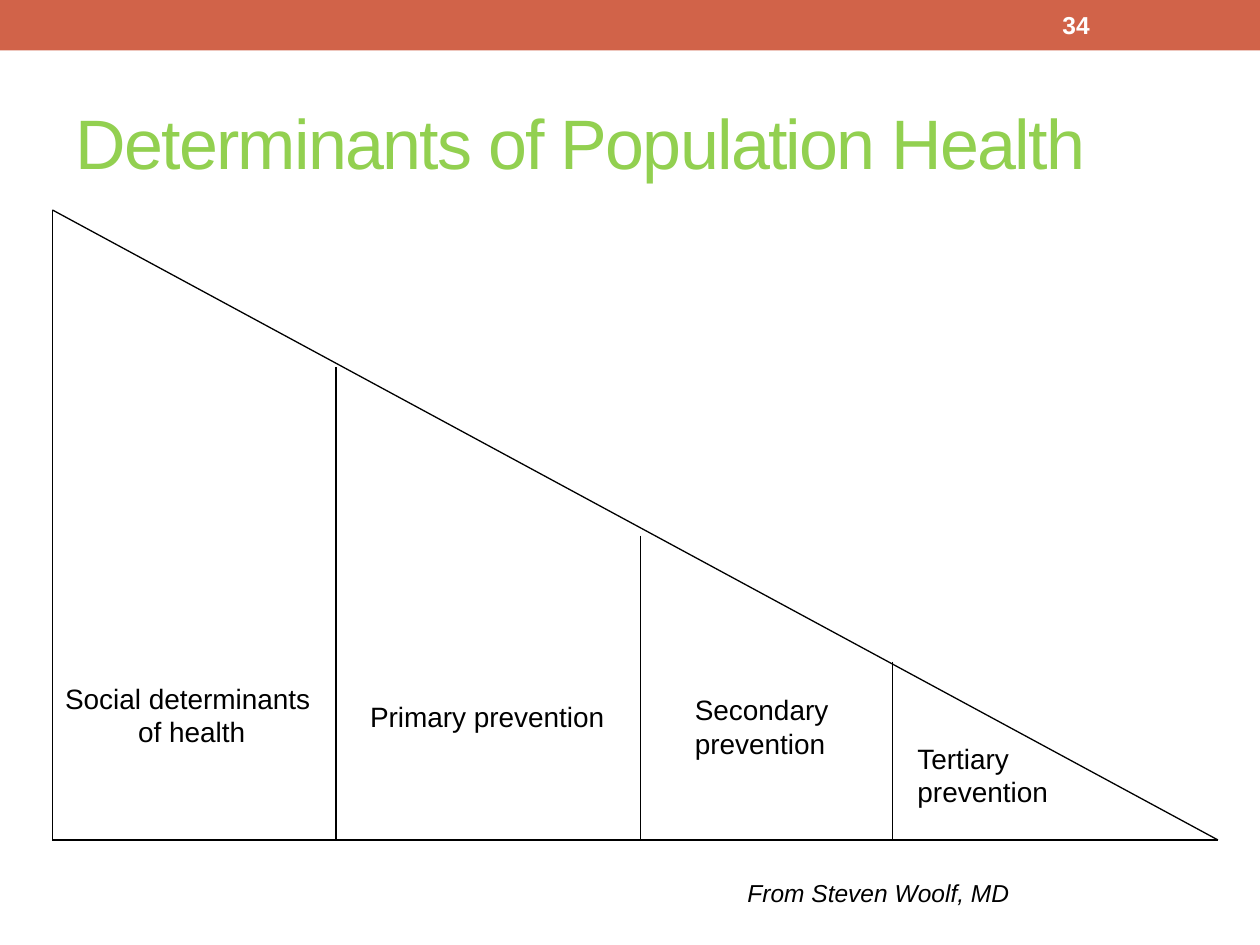
from dataclasses import dataclass

from lxml import etree
from pptx import Presentation
from pptx.dml.color import RGBColor
from pptx.enum.shapes import MSO_CONNECTOR, MSO_SHAPE
from pptx.enum.text import MSO_ANCHOR, MSO_AUTO_SIZE, PP_ALIGN
from pptx.oxml.ns import qn
from pptx.util import Inches, Pt

LINE, RECT = MSO_CONNECTOR.STRAIGHT, MSO_SHAPE.RECTANGLE
LEFT, MID = PP_ALIGN.LEFT, PP_ALIGN.CENTER
TOP, HALF = MSO_ANCHOR.TOP, MSO_ANCHOR.MIDDLE
FIT, FIXED = MSO_AUTO_SIZE.SHAPE_TO_FIT_TEXT, MSO_AUTO_SIZE.NONE
COLS, ROWS = 120, 90


@dataclass(frozen=True)
class Theme:
    font: str = "Arial"
    ink: str = "000000"
    paper: str = "FFFFFF"
    band: str = "D16349"
    head: str = "92D050"
    head_size: int = 40
    body_size: int = 16
    note_size: int = 14
    line: float = 0.75


class Deck:
    """Draws styled elements on a slide split into a grid of columns and rows."""

    def __init__(self, theme):
        self.theme = theme
        self.file = Presentation()
        self.file.slide_width, self.file.slide_height = Inches(10), Inches(7.5)
        self.slide = self.file.slides.add_slide(self.file.slide_layouts[5])
        self.shapes = self.slide.shapes
        fill = self.slide.background.fill
        fill.solid()
        fill.fore_color.rgb = RGBColor.from_string(theme.paper)

    def place(self, *cells):
        """Turn alternating columns and rows into slide lengths."""
        units = (self.file.slide_width / COLS, self.file.slide_height / ROWS)
        return [round(cell * units[i % 2]) for i, cell in enumerate(cells)]

    def band(self, *box):
        """Add a plain filled rectangle."""
        shape = self.shapes.add_shape(RECT, *self.place(*box))
        shape.shadow.inherit = False
        shape.fill.solid()
        shape.fill.fore_color.rgb = RGBColor.from_string(self.theme.band)
        shape.line.fill.background()

    def line(self, *ends):
        """Add a thin straight line."""
        line = self.shapes.add_connector(LINE, *self.place(*ends))
        line.line.width = Pt(self.theme.line)
        line.line.color.rgb = RGBColor.from_string(self.theme.ink)
        etree.SubElement(line._element.spPr, qn("a:effectLst"))

    def put(self, frame, rows, size, color, align=LEFT, bold=False, slant=False):
        """Fill a text frame with one run per paragraph and return the runs."""
        runs = []
        for i, text in enumerate(rows):
            para = frame.add_paragraph() if i else frame.paragraphs[0]
            para.alignment = align
            run = para.add_run()
            run.text = text
            font = run.font
            font.name, font.size = self.theme.font, Pt(size)
            font.bold, font.italic = bold, slant
            font.color.rgb = RGBColor.from_string(color)
            runs.append(run)
        return runs

    def text(self, box, rows, size, color, wrap=True, anchor=TOP, fit=FIT, **look):
        """Add a text box."""
        frame = self.shapes.add_textbox(*self.place(*box)).text_frame
        frame.word_wrap, frame.auto_size = wrap, fit
        frame.vertical_anchor = anchor
        self.put(frame, rows, size, color, **look)

    def title(self, box, text):
        """Move and format the title placeholder."""
        shape = self.shapes.title
        shape.left, shape.top, shape.width, shape.height = self.place(*box)
        frame = shape.text_frame
        frame.word_wrap, frame.auto_size = True, FIXED
        frame.vertical_anchor = HALF
        for run in self.put(frame, [text], self.theme.head_size, self.theme.head):
            run.font._element.set("spc", "-100")


def main():
    theme = Theme()
    deck = Deck(theme)
    deck.band(0, 0, COLS, 4.8)
    deck.title((6, 7, 108, 13), "Determinants of Population Health")

    left, right, top, base = 5, 116, 20, 80
    deck.line(left, base, right, base)
    deck.line(left, top, right, base)
    for col, row in ((left, top), (32, 35), (61, 51), (85, 63)):
        deck.line(col, row, col, base)

    labels = (
        ((5, 64.3, 26.5, 7.7), ("Social determinants ", "of health"), MID),
        ((34, 66, 24.8, 4.4), ("Primary prevention",), MID),
        ((65, 65.4, 15.8, 7.7), ("Secondary", "prevention"), LEFT),
        ((86.2, 70, 14.9, 7.7), ("Tertiary", "prevention"), LEFT),
    )
    for box, rows, align in labels:
        deck.text(box, rows, theme.body_size, theme.ink, wrap=False, align=align)

    deck.text((100, 0.25, 14, 4.3), ["34"], theme.note_size, theme.paper,
              anchor=HALF, fit=FIXED, bold=True)
    deck.text((70, 83, 39, 4.1), ["From Steven Woolf, MD"], theme.note_size,
              theme.ink, slant=True)
    deck.file.save("out.pptx")


if __name__ == "__main__":
    main()
